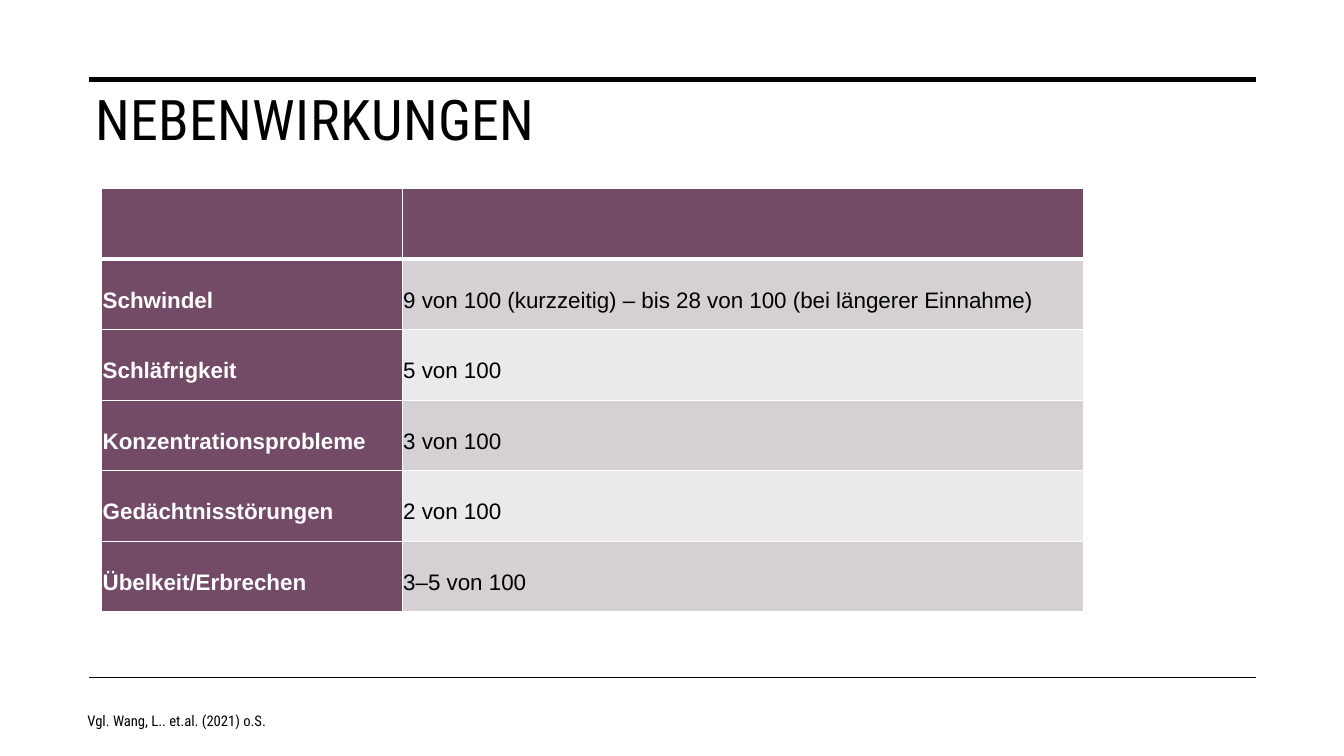
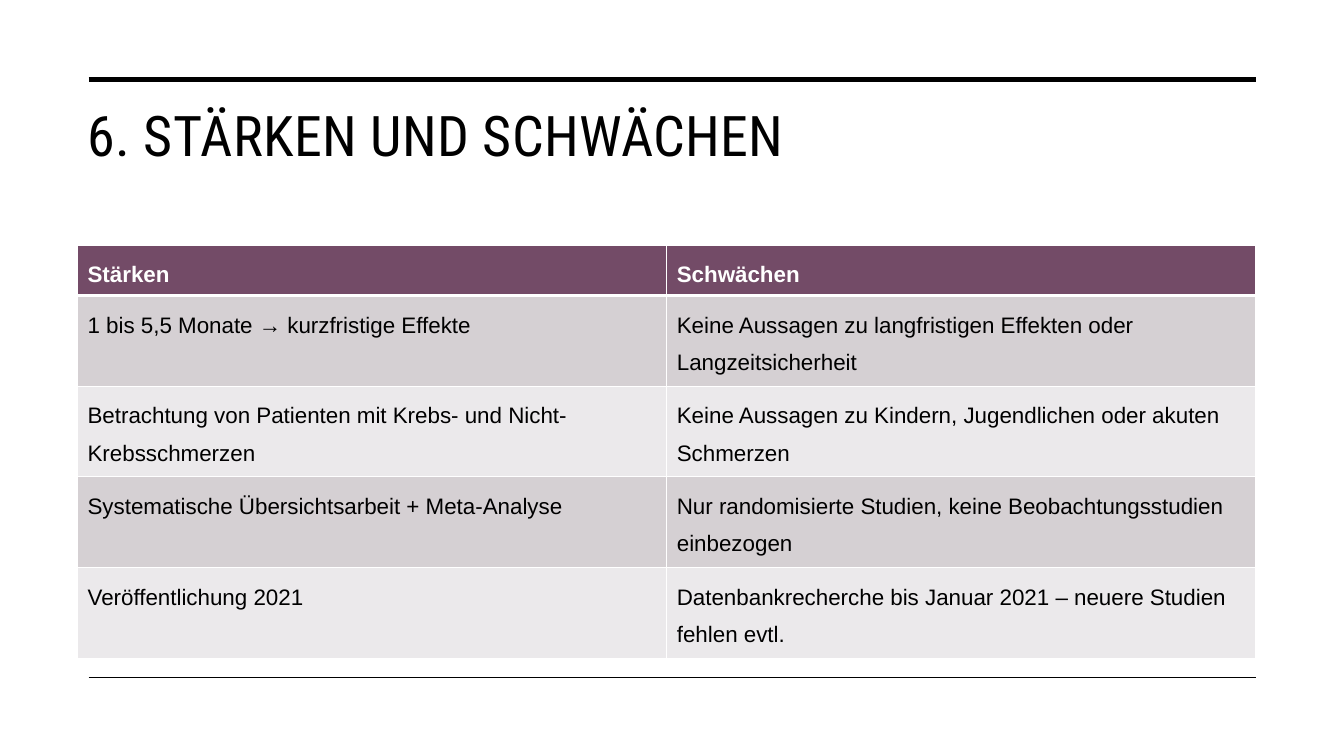
"""Builds two slides on side effects and on strengths and weaknesses of a study."""
from dataclasses import dataclass

from lxml import etree
from pptx import Presentation
from pptx.dml.color import RGBColor
from pptx.enum.shapes import MSO_CONNECTOR
from pptx.enum.text import MSO_ANCHOR, PP_ALIGN
from pptx.oxml.ns import qn
from pptx.slide import Slide
from pptx.table import _Cell
from pptx.text.text import TextFrame
from pptx.util import Pt

STRAIGHT = MSO_CONNECTOR.STRAIGHT
TOP, MIDDLE = MSO_ANCHOR.TOP, MSO_ANCHOR.MIDDLE
LEFT, JUSTIFY = PP_ALIGN.LEFT, PP_ALIGN.JUSTIFY

BLACK = RGBColor(0x00, 0x00, 0x00)
WHITE = RGBColor(0xFF, 0xFF, 0xFF)
PLUM = RGBColor(0x73, 0x4B, 0x67)
BANDS = (RGBColor(0xD5, 0xD0, 0xD3), RGBColor(0xEB, 0xE9, 0xEB))

HEADING_FONT = "Roboto Condensed"
TABLE_FONT = "Arial"
BLANK_LAYOUT = 6
RULE_LEFT, RULE_RIGHT = 63.4, 897.1
THIN_BORDER, HEADER_BORDER = 1, 3


@dataclass(frozen=True)
class Rule:
    top: float
    weight: float


@dataclass(frozen=True)
class Area:
    left: float
    top: float
    width: float
    height: float

    def lengths(self) -> tuple[Pt, Pt, Pt, Pt]:
        return Pt(self.left), Pt(self.top), Pt(self.width), Pt(self.height)


@dataclass(frozen=True)
class Grid:
    left: float
    top: float
    columns: tuple[float, ...]
    row_height: float
    rows: tuple[tuple[str, str], ...]
    label_column: bool = False
    align: PP_ALIGN = LEFT
    anchor: MSO_ANCHOR = TOP
    inset: float | None = None


@dataclass(frozen=True)
class Content:
    title: str
    title_area: Area
    grid: Grid
    source: str = ""


RULES = (Rule(56.9, 3.5), Rule(483.8, 1))
SOURCE_AREA = Area(55.4, 500.4, 357, 28.8)

CONTENTS = (
    Content(
        "NEBENWIRKUNGEN",
        Area(61.2, 60.5, 841.7, 103),
        Grid(
            72.7, 134.6, (214.6, 486.7), 50.4,
            (
                ("", ""),
                ("Schwindel", "9 von 100 (kurzzeitig) – bis 28 von 100 (bei längerer Einnahme)"),
                ("Schläfrigkeit", "5 von 100"),
                ("Konzentrationsprobleme", "3 von 100"),
                ("Gedächtnisstörungen", "2 von 100"),
                ("Übelkeit/Erbrechen", "3–5 von 100"),
            ),
            label_column=True, align=JUSTIFY, anchor=MIDDLE, inset=0.7,
        ),
        "Vgl. Wang, L.. et.al. (2021) o.S.",
    ),
    Content(
        "6. STÄRKEN UND SCHWÄCHEN",
        Area(55.4, 72, 841.7, 103),
        Grid(
            55.4, 175, (420.9, 420.9), 29.5,
            (
                ("Stärken", "Schwächen"),
                ("1 bis 5,5 Monate → kurzfristige Effekte",
                 "Keine Aussagen zu langfristigen Effekten oder Langzeitsicherheit"),
                ("Betrachtung von Patienten mit Krebs- und Nicht-Krebsschmerzen",
                 "Keine Aussagen zu Kindern, Jugendlichen oder akuten Schmerzen"),
                ("Systematische Übersichtsarbeit + Meta-Analyse",
                 "Nur randomisierte Studien, keine Beobachtungsstudien einbezogen"),
                ("Veröffentlichung 2021",
                 "Datenbankrecherche bis Januar 2021 – neuere Studien fehlen evtl."),
            ),
        ),
    ),
)


def write_text(frame: TextFrame, text: str, *, size: float, font: str,
               color: RGBColor = BLACK, bold: bool = False, align: PP_ALIGN = LEFT,
               line_spacing: float = 1.0, tracking: float = 0) -> None:
    para = frame.paragraphs[0]
    para.alignment = align
    para.line_spacing = line_spacing
    span = para.add_run()
    span.text = text
    span.font.size = Pt(size)
    span.font.name = font
    span.font.bold = bold
    span.font.color.rgb = color
    if tracking:
        span._r.get_or_add_rPr().set("spc", str(round(tracking * 100)))


def add_text_box(page: Slide, area: Area, anchor: MSO_ANCHOR) -> TextFrame:
    frame = page.shapes.add_textbox(*area.lengths()).text_frame
    frame.word_wrap = True
    frame.vertical_anchor = anchor
    return frame


def add_rule(page: Slide, rule: Rule) -> None:
    line = page.shapes.add_connector(
        STRAIGHT, Pt(RULE_LEFT), Pt(rule.top), Pt(RULE_RIGHT), Pt(rule.top))
    line.line.color.rgb = BLACK
    line.line.width = Pt(rule.weight)
    etree.SubElement(line.element.spPr, qn("a:effectLst"))


def add_borders(cell: _Cell, top: float, bottom: float) -> None:
    properties = cell._tc.get_or_add_tcPr()
    weights = {"lnL": THIN_BORDER, "lnR": THIN_BORDER, "lnT": top, "lnB": bottom}
    for side, weight in weights.items():
        border = etree.SubElement(properties, qn(f"a:{side}"), w=str(Pt(weight)))
        fill = etree.SubElement(border, qn("a:solidFill"))
        etree.SubElement(fill, qn("a:srgbClr"), val=str(WHITE))


def format_cell(cell: _Cell, grid: Grid, row: int, column: int) -> None:
    emphasized = row == 0 or (grid.label_column and column == 0)
    add_borders(cell,
                top=HEADER_BORDER if row == 1 else THIN_BORDER,
                bottom=HEADER_BORDER if row == 0 else THIN_BORDER)
    cell.fill.solid()
    cell.fill.fore_color.rgb = PLUM if emphasized else BANDS[(row - 1) % 2]
    cell.vertical_anchor = grid.anchor
    if grid.inset is not None:
        cell.margin_left = cell.margin_right = Pt(grid.inset)
        cell.margin_top = cell.margin_bottom = Pt(grid.inset)
    text = grid.rows[row][column]
    if text:
        write_text(cell.text_frame, text, size=16, font=TABLE_FONT, bold=emphasized,
                   color=WHITE if emphasized else BLACK, align=grid.align, line_spacing=1.5)


def add_grid(page: Slide, grid: Grid) -> None:
    area = Area(grid.left, grid.top, sum(grid.columns), grid.row_height * len(grid.rows))
    table = page.shapes.add_table(
        len(grid.rows), len(grid.columns), *area.lengths()).table
    for column, width in zip(table.columns, grid.columns):
        column.width = Pt(width)
    for row_index, row in enumerate(table.rows):
        row.height = Pt(grid.row_height)
        for column_index, cell in enumerate(row.cells):
            format_cell(cell, grid, row_index, column_index)


def add_page(deck, content: Content) -> None:
    page = deck.slides.add_slide(deck.slide_layouts[BLANK_LAYOUT])
    for rule in RULES:
        add_rule(page, rule)
    write_text(add_text_box(page, content.title_area, TOP), content.title,
               size=40, font=HEADING_FONT, line_spacing=0.95, tracking=0.3)
    add_grid(page, content.grid)
    if content.source:
        write_text(add_text_box(page, SOURCE_AREA, MIDDLE), content.source,
                   size=10.5, font=HEADING_FONT)


def main() -> None:
    deck = Presentation()
    deck.slide_width, deck.slide_height = Pt(960), Pt(540)
    for content in CONTENTS:
        add_page(deck, content)
    deck.save("out.pptx")


if __name__ == "__main__":
    main()
